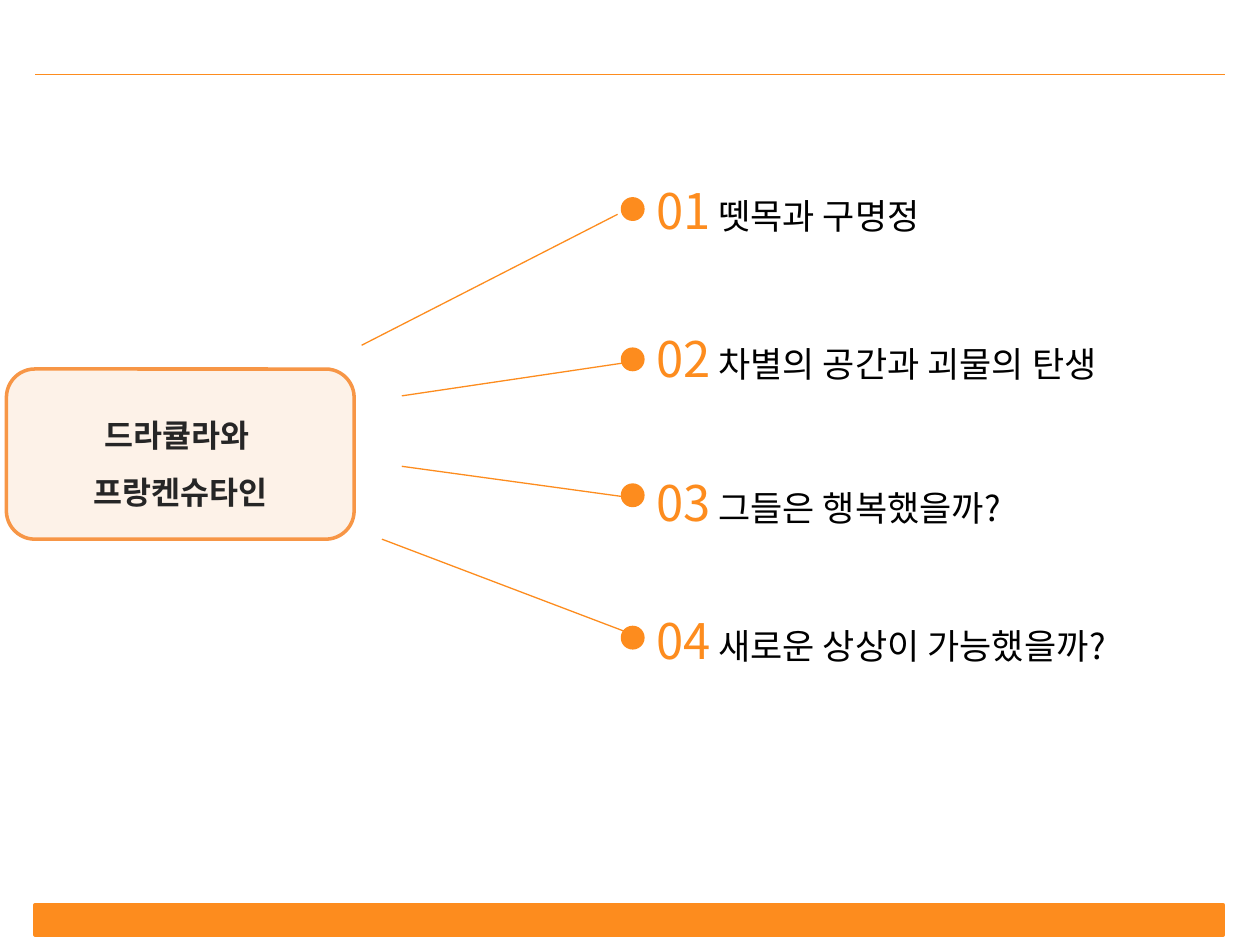
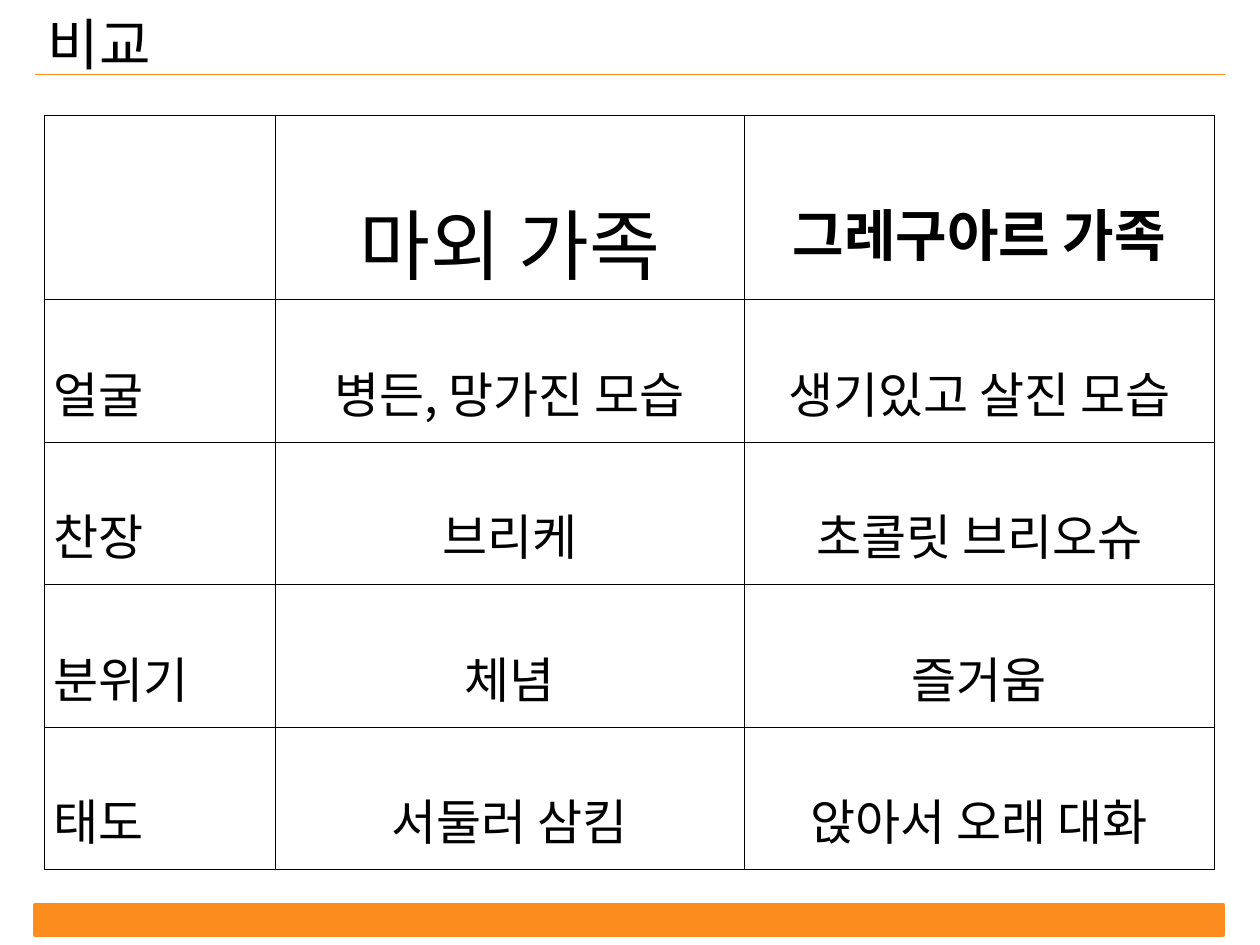
"""Builds two slides: a topic overview with four spokes and a comparison table."""
from lxml import etree
from pptx import Presentation
from pptx.dml.color import RGBColor
from pptx.enum.shapes import MSO_CONNECTOR, MSO_SHAPE
from pptx.enum.text import MSO_ANCHOR, PP_ALIGN
from pptx.oxml.ns import qn
from pptx.util import Cm, Pt

STRAIGHT = MSO_CONNECTOR.STRAIGHT
RECT, ROUND, OVAL = MSO_SHAPE.RECTANGLE, MSO_SHAPE.ROUNDED_RECTANGLE, MSO_SHAPE.OVAL
LEFT, CENTER, MIDDLE = PP_ALIGN.LEFT, PP_ALIGN.CENTER, MSO_ANCHOR.MIDDLE
FONT = "Noto Sans CJK KR"
ORANGE, BORDER, PEACH = "FD8C1E", "F79646", "FDEADA"
BLACK, DARK = "000000", "262626"


def paint(shape, line, width, fill=None):
    shape.line.color.rgb = RGBColor.from_string(line)
    shape.line.width = Pt(width)
    if fill:
        shape.fill.solid()
        shape.fill.fore_color.rgb = RGBColor.from_string(fill)
    etree.SubElement(shape._element.spPr, qn("a:effectLst"))


def write(p, text, color, size, bold=False):
    r = p.add_run()
    r.text = text
    for key, value in {"name": FONT, "size": Pt(size), "bold": bold}.items():
        setattr(r.font, key, value)
    r.font.color.rgb = RGBColor.from_string(color)
    etree.SubElement(r.font._element, qn("a:ea"), typeface=FONT)


prs = Presentation()
prs.slide_width, prs.slide_height = Cm(25.4), Cm(19.05)
overview = prs.slides.add_slide(prs.slide_layouts[6])
comparison = prs.slides.add_slide(prs.slide_layouts[5])

for s in (overview, comparison):
    rule = s.shapes.add_connector(STRAIGHT, Cm(0.71), Cm(1.5), Cm(24.69), Cm(1.5))
    paint(rule, ORANGE, 0.75)
    band = s.shapes.add_shape(RECT, Cm(0.71), Cm(18.24), Cm(23.95), Cm(0.61))
    paint(band, ORANGE, 2, ORANGE)

topics = [
    ("뗏목과 구명정", (7.29, 6.96, 12.45, 4.32), 4.01, 3.51),
    ("차별의 공간과 괴물의 탄생", (8.1, 7.98, 12.55, 7.32), 7.04, 6.5),
    ("그들은 행복했을까?", (8.1, 9.4, 12.55, 10.01), 9.78, 9.4),
    ("새로운 상상이 가능했을까?", (7.7, 10.87, 12.73, 12.78), 12.65, 12.19),
]
for number, (topic, ends, dot_top, text_top) in enumerate(topics, 1):
    spoke = overview.shapes.add_connector(STRAIGHT, *[Cm(v) for v in ends])
    paint(spoke, ORANGE, 0.75)
    dot = overview.shapes.add_shape(OVAL, Cm(12.55), Cm(dot_top), Cm(0.41), Cm(0.41))
    paint(dot, ORANGE, 2, ORANGE)
    tf = overview.shapes.add_textbox(Cm(12.98), Cm(text_top), Cm(12), Cm(1.45)).text_frame
    tf.word_wrap = True
    p = tf.paragraphs[0]
    write(p, f"{number:02}", ORANGE, 28)
    write(p, f" {topic}", BLACK, 20)

hub = overview.shapes.add_shape(ROUND, Cm(0.13), Cm(7.44), Cm(7.01), Cm(3.43))
paint(hub, BORDER, 2, PEACH)
tint = hub._element.spPr.find(qn("a:solidFill"))[0]
etree.SubElement(tint, qn("a:alpha"), val="60000")
tf = hub.text_frame
tf.vertical_anchor = MIDDLE
for p, text in zip((tf.paragraphs[0], tf.add_paragraph()), ("드라큘라와 ", "프랑켄슈타인")):
    p.alignment, p.line_spacing = CENTER, 1.5
    write(p, text, DARK, 18, True)

title = comparison.shapes.title
title.left, title.top, title.width, title.height = Cm(0.71), Cm(0.08), Cm(17.07), Cm(1.57)
title.text_frame.vertical_anchor = MIDDLE
p = title.text_frame.paragraphs[0]
p.alignment = LEFT
write(p, "비교", BLACK, 32)

rows = [
    ("", "마외 가족", "그레구아르 가족"),
    ("얼굴", "병든, 망가진 모습", "생기있고 살진 모습"),
    ("찬장", "브리케", "초콜릿 브리오슈"),
    ("분위기", "체념", "즐거움"),
    ("태도", "서둘러 삼킴", "앉아서 오래 대화"),
]
table = comparison.shapes.add_table(5, 3, Cm(0.89), Cm(2.33), Cm(23.6), Cm(15.19)).table
table.first_row = table.horz_banding = False
for column, width in zip(table.columns, (4.65, 9.47, 9.47)):
    column.width = Cm(width)
margins = {"margin_left": 0.18, "margin_right": 0.18, "margin_top": 0.05, "margin_bottom": 0.05}
header_formats = {1: (44, False), 2: (32, True)}
for i, row in enumerate(rows):
    table.rows[i].height = Cm(2.87 if i else 3.71)
    for j, text in enumerate(row):
        cell = table.cell(i, j)
        cell.vertical_anchor = MIDDLE
        for key, value in margins.items():
            setattr(cell, key, Cm(value))
        tcPr = cell._tc.get_or_add_tcPr()
        for side in ("lnL", "lnR", "lnT", "lnB"):
            ln = etree.SubElement(tcPr, qn(f"a:{side}"), w=str(Pt(0.28)))
            fill = etree.SubElement(ln, qn("a:solidFill"))
            etree.SubElement(fill, qn("a:srgbClr"), val=BLACK)
        cell.fill.background()
        if text:
            p = cell.text_frame.paragraphs[0]
            p.alignment, p.line_spacing = CENTER if j else LEFT, 1.6
            size, bold = (28, False) if i else header_formats[j]
            write(p, text, BLACK, size, bold)

prs.save("out.pptx")
